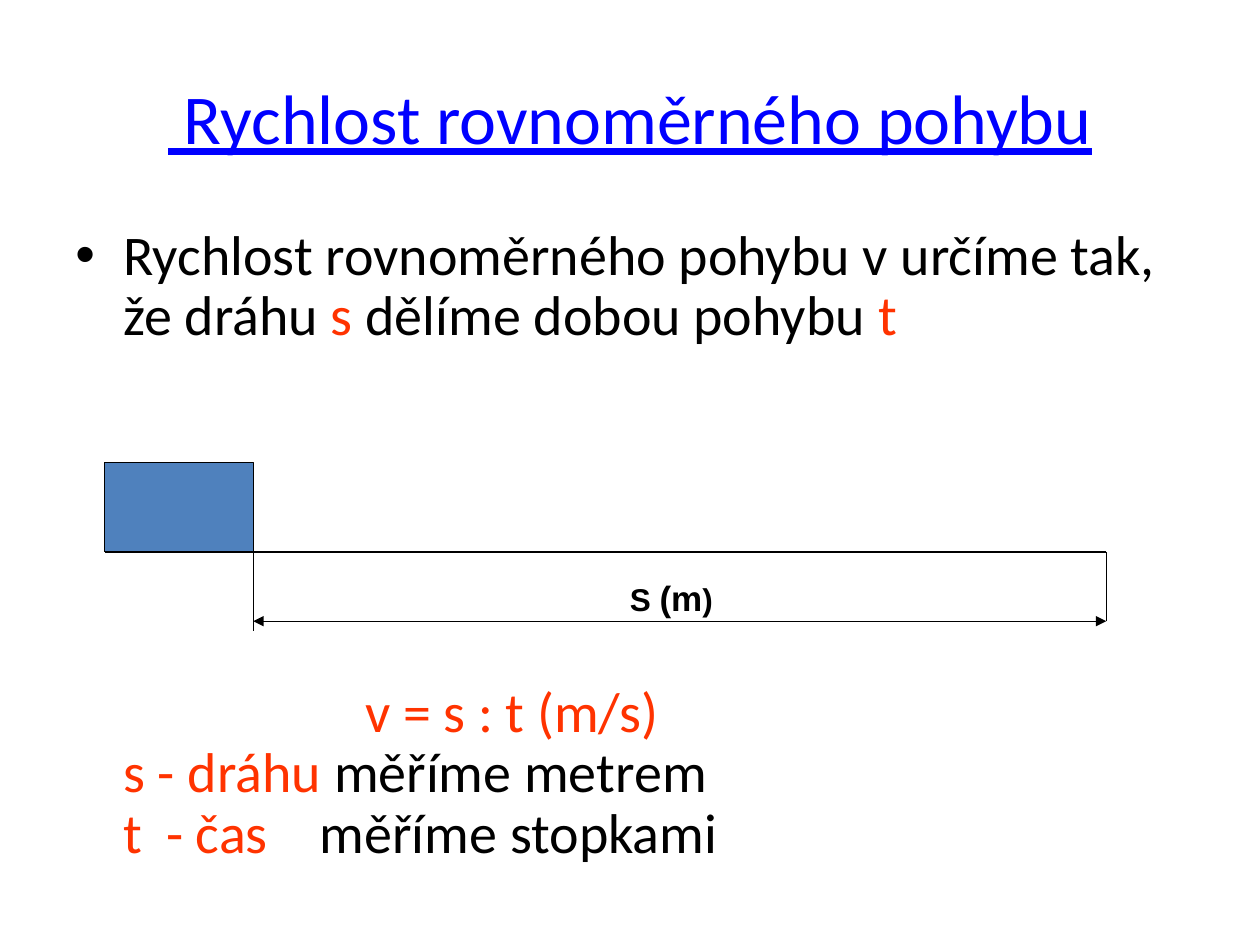
from dataclasses import dataclass

from lxml.etree import SubElement
from pptx import Presentation
from pptx.dml.color import RGBColor
from pptx.enum.shapes import MSO_CONNECTOR, MSO_SHAPE
from pptx.enum.text import MSO_ANCHOR, PP_ALIGN
from pptx.oxml.ns import qn
from pptx.util import Inches, Pt

BLACK = RGBColor(0x00, 0x00, 0x00)
BLUE = RGBColor(0x00, 0x00, 0xFF)
RED = RGBColor(0xFF, 0x33, 0x00)
STEEL = RGBColor(0x4F, 0x81, 0xBD)
LINE_WIDTH = Pt(0.75)

# Key positions of the motion diagram, in inches
BODY_LEFT, BODY_FRONT, TRACK_END = 0.83, 2.01, 8.78
BODY_TOP, TRACK_Y, DIMENSION_Y = 3.67, 4.38, 4.93


@dataclass(frozen=True)
class Run:
    text: str
    color: RGBColor = BLACK
    size: float = 32


@dataclass(frozen=True)
class Line:
    start: tuple[float, float]
    end: tuple[float, float]
    arrows: bool = False


DIAGRAM_LINES = [
    Line((BODY_LEFT, TRACK_Y), (TRACK_END, TRACK_Y)),
    Line((TRACK_END, TRACK_Y), (TRACK_END, DIMENSION_Y)),
    Line((BODY_LEFT, 4.3), (BODY_LEFT, TRACK_Y)),
    Line((BODY_FRONT, TRACK_Y), (BODY_FRONT, 5.01)),
    Line((BODY_FRONT, DIMENSION_Y), (TRACK_END, DIMENSION_Y), arrows=True),
]


def add_text(slide, box: tuple[float, ...], paragraphs: list[list[Run]], *,
             font="Calibri", bold=False, underline=False, wrap=True,
             align=PP_ALIGN.LEFT, anchor=MSO_ANCHOR.TOP, spacing=1.0):
    """Add a text box and return its paragraphs."""
    frame = slide.shapes.add_textbox(*map(Inches, box)).text_frame
    frame.word_wrap = wrap
    frame.vertical_anchor = anchor
    for index, runs in enumerate(paragraphs):
        paragraph = frame.add_paragraph() if index else frame.paragraphs[0]
        paragraph.alignment = align
        paragraph.line_spacing = spacing
        for item in runs:
            run = paragraph.add_run()
            run.text = item.text
            run.font.name = font
            run.font.size = Pt(item.size)
            run.font.bold = bold
            run.font.underline = underline
            run.font.color.rgb = item.color
    return frame.paragraphs


def set_indent(paragraph, left: float, first: float = 0) -> None:
    properties = paragraph._p.get_or_add_pPr()
    properties.set("marL", str(Inches(left)))
    properties.set("indent", str(Inches(first)))


def add_bullet(paragraph) -> None:
    properties = paragraph._p.get_or_add_pPr()
    SubElement(properties, qn("a:buFont"), typeface="Arial")
    SubElement(properties, qn("a:buChar"), char="•")


def add_tab_stops(paragraph, *positions: float) -> None:
    tabs = SubElement(paragraph._p.get_or_add_pPr(), qn("a:tabLst"))
    for position in positions:
        SubElement(tabs, qn("a:tab"), pos=str(Inches(position)), algn="l")


def add_line(slide, line: Line) -> None:
    connector = slide.shapes.add_connector(
        MSO_CONNECTOR.STRAIGHT, *map(Inches, line.start + line.end))
    connector.line.color.rgb = BLACK
    connector.line.width = LINE_WIDTH
    if line.arrows:
        outline = connector.line._get_or_add_ln()
        for tag in ("a:headEnd", "a:tailEnd"):
            SubElement(outline, qn(tag), type="triangle")
    SubElement(connector._element.spPr, qn("a:effectLst"))


def add_moving_body(slide) -> None:
    shape = slide.shapes.add_shape(
        MSO_SHAPE.RECTANGLE, Inches(BODY_LEFT), Inches(BODY_TOP),
        Inches(BODY_FRONT - BODY_LEFT), Inches(TRACK_Y - BODY_TOP))
    shape.shadow.inherit = False
    shape.fill.solid()
    shape.fill.fore_color.rgb = STEEL
    shape.line.color.rgb = BLACK
    shape.line.width = LINE_WIDTH


def main() -> None:
    presentation = Presentation()
    presentation.slide_width = Inches(10)
    presentation.slide_height = Inches(7.5)
    slide = presentation.slides.add_slide(presentation.slide_layouts[6])

    add_text(slide, (0.5, 0.3, 9, 1.25),
             [[Run(" Rychlost rovnoměrného pohybu", BLUE, 40)]],
             underline=True, align=PP_ALIGN.CENTER, anchor=MSO_ANCHOR.MIDDLE)

    definition, = add_text(slide, (0.5, 1.75, 9, 1.2), [[
        Run("Rychlost rovnoměrného pohybu v určíme tak, že dráhu "),
        Run("s", RED), Run(" dělíme dobou pohybu "), Run("t", RED),
    ]], spacing=0.9)
    set_indent(definition, 0.38, -0.38)
    add_bullet(definition)

    formula, _, time = add_text(slide, (0.88, 5.38, 8.62, 1.84), [
        [Run("v = s : t (m/s)", RED)],
        [Run("s - dráhu ", RED), Run("měříme metrem")],
        [Run("t\t- čas\t", RED), Run("měříme stopkami")],
    ], spacing=0.9)
    set_indent(formula, 1.92)
    add_tab_stops(time, 0.34, 1.56)

    add_moving_body(slide)
    for line in DIAGRAM_LINES:
        add_line(slide, line)
    add_text(slide, (4.9, 4.53, 0.86, 0.43),
             [[Run("S ", size=18), Run("(m", size=20), Run(")", size=18)]],
             font="Arial", bold=True, wrap=False)

    presentation.save("out.pptx")


if __name__ == "__main__":
    main()
